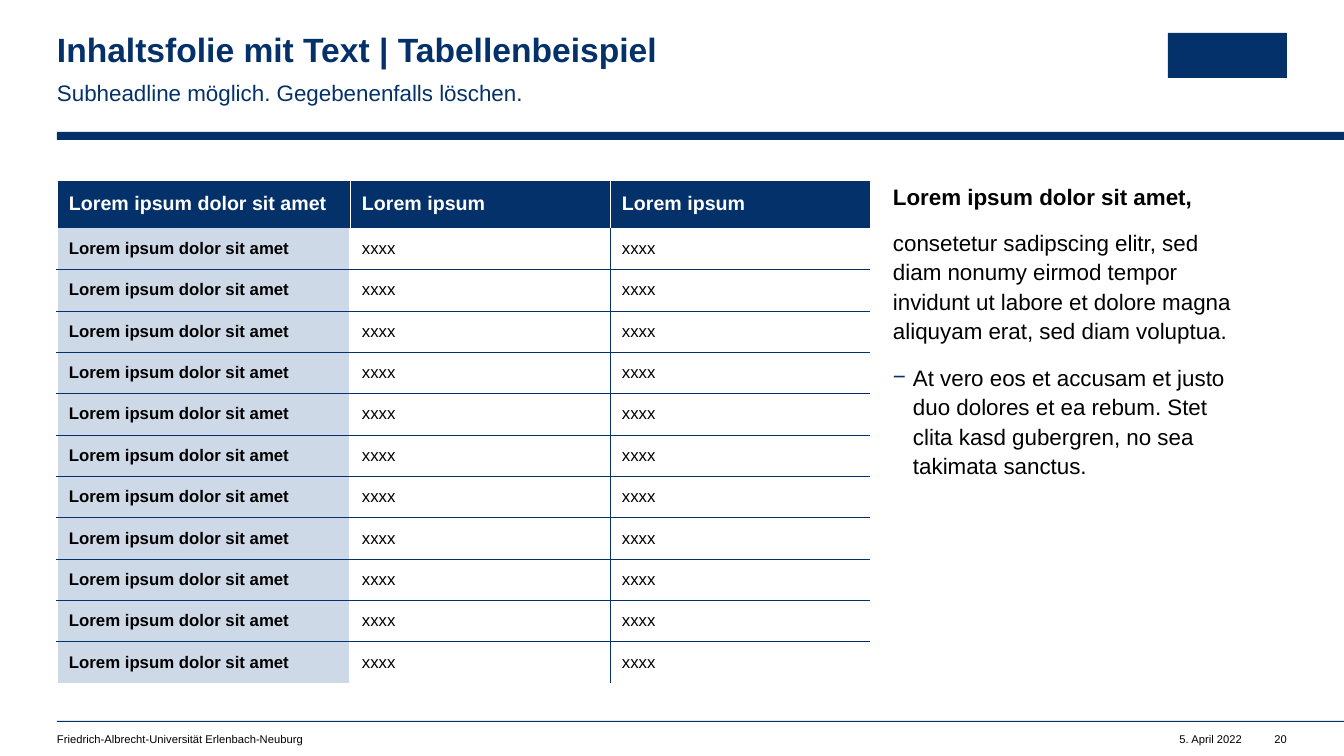
"""Build a content slide with a table, a text column and a footer."""
from dataclasses import dataclass

from lxml import etree
from pptx import Presentation
from pptx.dml.color import RGBColor
from pptx.enum.shapes import MSO_SHAPE
from pptx.enum.text import MSO_ANCHOR, MSO_AUTO_SIZE, PP_ALIGN
from pptx.oxml.ns import qn
from pptx.util import Emu, Pt

RECT = MSO_SHAPE.RECTANGLE
TOP, MIDDLE = MSO_ANCHOR.TOP, MSO_ANCHOR.MIDDLE
LEFT, RIGHT = PP_ALIGN.LEFT, PP_ALIGN.RIGHT
NO_FIT = MSO_AUTO_SIZE.NONE


@dataclass(frozen=True)
class Theme:
    font: str = "Arial"
    navy: str = "04316A"
    pale: str = "CED9E7"
    white: str = "FFFFFF"
    black: str = "000000"
    title: int = 24
    text: int = 16
    head: int = 14
    cell: int = 12
    foot: int = 8


T = Theme()
TITLE = "Inhaltsfolie mit Text | Tabellenbeispiel"
SUBHEAD = "Subheadline möglich. Gegebenenfalls löschen."
HEADER = ["Lorem ipsum dolor sit amet", "Lorem ipsum", "Lorem ipsum"]
ROWS = [["Lorem ipsum dolor sit amet", "xxxx", "xxxx"]] * 11
BODY = [
    ("Lorem ipsum dolor sit amet,", True, 0),
    ("consetetur sadipscing elitr, sed diam nonumy eirmod tempor invidunt ut "
     "labore et dolore magna aliquyam erat, sed diam voluptua.", False, 0),
    ("At vero eos et accusam et justo duo dolores et ea rebum. Stet clita kasd "
     "gubergren, no sea takimata sanctus.", False, 1),
]
FOOTER = [
    ("Friedrich-Albrecht-Universität Erlenbach-Neuburg", (57, 732, 603, 13), LEFT),
    ("5. April 2022", (1148, 732, 94, 13), RIGHT),
    ("20", (1266, 732, 21, 13), RIGHT),
]
BARS = [(57, 132, 1287, 8), (57, 721, 1287, 1), (1168, 33, 119, 45)]
TITLE_BOX = (57, 33, 755, 36)
SUBHEAD_BOX = (57, 76, 755, 27)
BODY_BOX = (893, 180, 394, 504)
TABLE_BOX = (57, 180, 813, 503)
COLUMNS = [293, 260, 260]
HEAD_H = 48
RIGHT_INSET = 39
INDENT = 20


def px(n):
    return Emu(round(n * 914400 / 100.8))


def place(sp, box):
    for name, n in zip(("left", "top", "width", "height"), box):
        setattr(sp, name, px(n))


def assign(obj, values):
    for name, value in values.items():
        setattr(obj, name, value)


def frame(tf, right=0):
    assign(tf, dict(margin_left=0, margin_top=0, margin_right=px(right), margin_bottom=0,
                    word_wrap=True, auto_size=NO_FIT, vertical_anchor=TOP))


def write(p, text, size, color, bold=False, **values):
    assign(p, dict(alignment=LEFT, space_before=Pt(0)) | values)
    r = p.add_run()
    r.text = text
    assign(r.font, dict(name=T.font, size=Pt(size), bold=bold))
    r.font.color.rgb = RGBColor.from_string(color)


def bullet(p, level):
    pPr = p._p.get_or_add_pPr()
    pPr.set("marL", str(px(INDENT * level)))
    pPr.set("indent", str(-px(INDENT * level)))
    if not level:
        etree.SubElement(pPr, qn("a:buNone"))
        return
    clr = etree.SubElement(pPr, qn("a:buClr"))
    etree.SubElement(clr, qn("a:srgbClr"), val=T.navy)
    etree.SubElement(pPr, qn("a:buFont"), typeface=T.font)
    etree.SubElement(pPr, qn("a:buChar"), char="−")


def borders(cell, lines):
    tcPr = cell._tc.get_or_add_tcPr()
    for i, side in enumerate("LRTB"):
        color, width = lines.get(side, (None, 0))
        ln = etree.Element(qn("a:ln" + side), w=str(Pt(width)))
        if color:
            fill = etree.SubElement(ln, qn("a:solidFill"))
            etree.SubElement(fill, qn("a:srgbClr"), val=color)
        else:
            etree.SubElement(ln, qn("a:noFill"))
        tcPr.insert(i, ln)


def cell_lines(row, col, last_row):
    thin, edge, split = (T.navy, 0.25), (T.white, 1), (T.white, 0.5)
    verticals = [edge, split, split, None] if row == 0 else [edge, edge, thin, None]
    lines = {"L": verticals[col], "R": verticals[col + 1]}
    lines["T"] = edge if row == 0 else thin if row > 1 else None
    lines["B"] = thin if 0 < row < last_row else None
    return {side: line for side, line in lines.items() if line}


def add_table(s):
    data = [HEADER] + ROWS
    tbl = s.shapes.add_table(len(data), len(COLUMNS), *map(px, TABLE_BOX)).table
    tbl._tbl.tblPr.find(qn("a:tableStyleId")).text = "{2D5ABB26-0587-4C30-8999-92F81FD0307C}"
    tbl.horz_banding = False
    for column, width in zip(tbl.columns, COLUMNS):
        column.width = px(width)
    row_h = (TABLE_BOX[3] - HEAD_H) / len(ROWS)
    for i, texts in enumerate(data):
        tbl.rows[i].height = px(row_h if i else HEAD_H)
        for j, text in enumerate(texts):
            cell = tbl.cell(i, j)
            assign(cell, dict(margin_left=px(12), margin_right=px(12), margin_top=px(4),
                              margin_bottom=px(4), vertical_anchor=MIDDLE))
            if i == 0 or j == 0:
                cell.fill.solid()
                cell.fill.fore_color.rgb = RGBColor.from_string(T.pale if i else T.navy)
            else:
                cell.fill.background()
            borders(cell, cell_lines(i, j, len(ROWS)))
            size, color = (T.cell, T.black) if i else (T.head, T.white)
            write(cell.text_frame.paragraphs[0], text, size, color, i == 0 or j == 0)


def main():
    prs = Presentation()
    prs.slide_width, prs.slide_height = px(1344), px(756)
    s = prs.slides.add_slide(prs.slide_layouts[3])
    title, subhead, body = s.placeholders

    for box in BARS:
        sp = s.shapes.add_shape(RECT, *map(px, box))
        sp.shadow.inherit = False
        sp.fill.solid()
        sp.fill.fore_color.rgb = RGBColor.from_string(T.navy)
        sp.line.fill.background()

    place(title, TITLE_BOX)
    frame(title.text_frame)
    write(title.text_frame.paragraphs[0], TITLE, T.title, T.navy, True, line_spacing=0.9)

    spacing = dict(line_spacing=1.1, space_after=Pt(12))
    place(subhead, SUBHEAD_BOX)
    frame(subhead.text_frame, RIGHT_INSET)
    p = subhead.text_frame.paragraphs[0]
    write(p, SUBHEAD, T.text, T.navy, **spacing)
    bullet(p, 0)

    place(body, BODY_BOX)
    tf = body.text_frame
    frame(tf, RIGHT_INSET)
    for i, (text, bold, level) in enumerate(BODY):
        p = tf.add_paragraph() if i else tf.paragraphs[0]
        write(p, text, T.text, T.black, bold, level=level, **spacing)
        bullet(p, level)

    add_table(s)
    for text, box, align in FOOTER:
        tf = s.shapes.add_textbox(*map(px, box)).text_frame
        frame(tf)
        write(tf.paragraphs[0], text, T.foot, T.black, alignment=align)
    prs.save("out.pptx")


if __name__ == "__main__":
    main()
